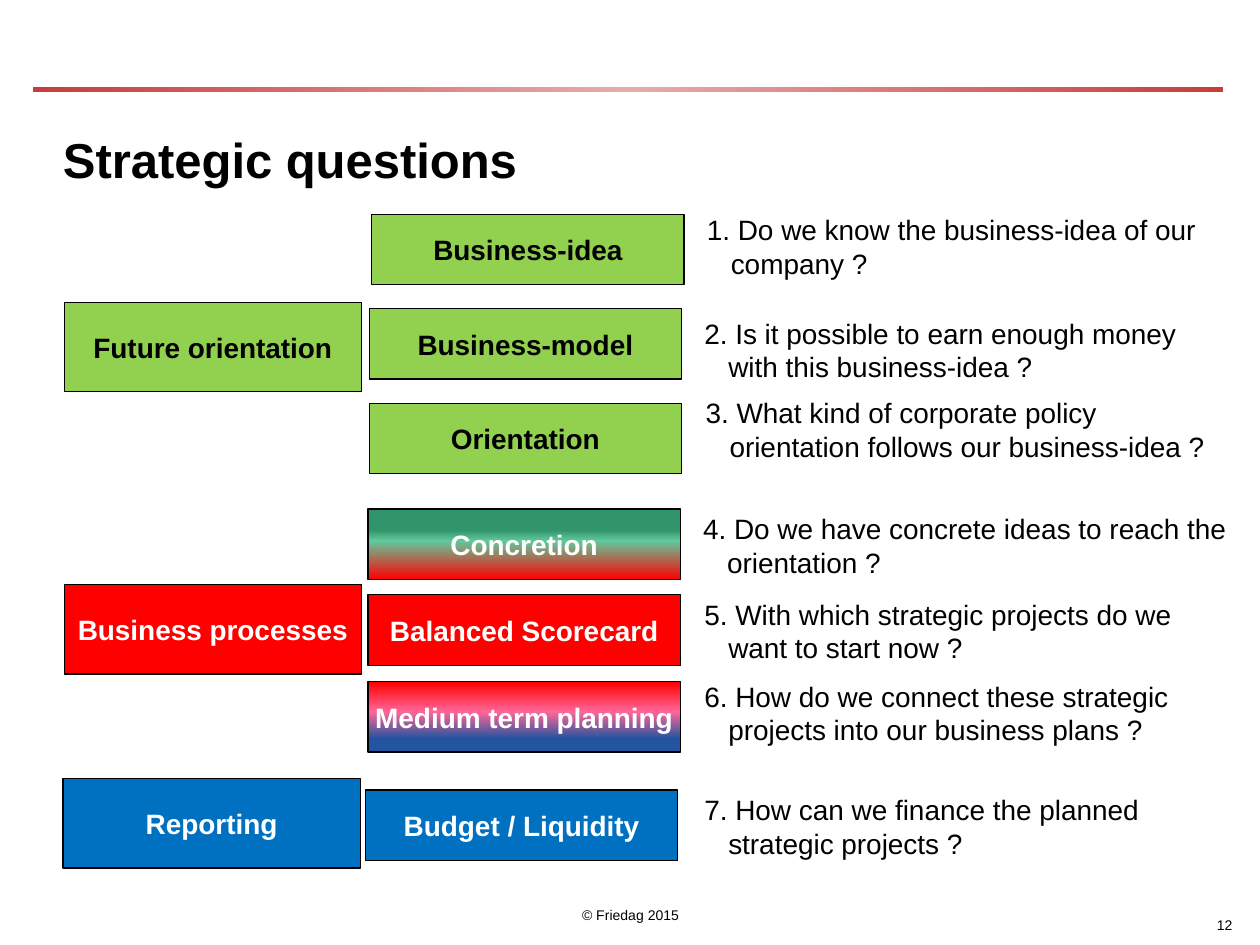
from lxml.etree import SubElement as Sub
from pptx import Presentation as Pres
from pptx.dml.color import RGBColor as RGB
from pptx.enum.shapes import MSO_SHAPE as Shape
from pptx.enum.text import MSO_ANCHOR as Anchor, PP_ALIGN as Align
from pptx.oxml.ns import qn
from pptx.util import Inches, Pt

HUES = {
    "black": "000000", "white": "FFFFFF", "lime": "92D050", "red": "FF0000",
    "blue": "0070C0", "rule": "C83C3C", "blush": "E7ABAB", "pine": "32946A",
    "mint": "60C99C", "pink": "FF6699", "navy": "2254A0",
}
FADE = [(0, "pine"), (30, "pine"), (45, "mint"), (100, "red")]
DUSK = [(0, "red"), (43, "pink"), (81, "navy")]
LINE = [(0, "rule"), (50, "blush"), (100, "rule")]


def put(frame, text, size=16, bold=False, hue="black", align=Align.LEFT,
        anchor=Anchor.TOP, pads=(0.04, 0.04, 0.04, 0.04), hang=0, after=0):
    frame.word_wrap = True
    frame.vertical_anchor = anchor
    (frame.margin_left, frame.margin_top,
     frame.margin_right, frame.margin_bottom) = map(Inches, pads)
    para = frame.paragraphs[0]
    para.alignment = align
    para.space_after = Pt(after)
    if hang:
        props = para._p.get_or_add_pPr()
        props.set("marL", str(Inches(hang)))
        props.set("indent", str(-Inches(hang)))
    run = para.add_run()
    run.text = text
    font = run.font
    font.name, font.size, font.bold = "Arial", Pt(size), bold
    font.color.rgb = RGB.from_string(HUES[hue])


class Deck:
    def __init__(self):
        self.pres = Pres()
        self.pres.slide_width = Inches(10)
        self.pres.slide_height = Inches(7.5)
        self.slide = self.pres.slides.add_slide(self.pres.slide_layouts[6])

    def blend(self, item, stops, angle):
        item.fill.gradient()
        item.fill.gradient_angle = angle
        group = item._element.spPr.find(qn("a:gradFill")).find(qn("a:gsLst"))
        for old in list(group):
            group.remove(old)
        for pos, hue in stops:
            stop = Sub(group, qn("a:gs"), pos=str(pos * 1000))
            Sub(stop, qn("a:srgbClr"), val=HUES[hue])

    def rect(self, area, fill, angle=270):
        item = self.slide.shapes.add_shape(Shape.RECTANGLE, *map(Inches, area))
        item.shadow.inherit = False
        item.line.fill.background()
        if isinstance(fill, str):
            item.fill.solid()
            item.fill.fore_color.rgb = RGB.from_string(HUES[fill])
        else:
            self.blend(item, fill, angle)
        return item

    def box(self, area, text, fill):
        item = self.rect(area, fill)
        item.line.color.rgb = RGB.from_string(HUES["black"])
        item.line.width = Pt(0.75)
        put(item.text_frame, text, bold=True, align=Align.CENTER,
            hue="black" if fill == "lime" else "white",
            anchor=Anchor.MIDDLE, after=6)

    def text(self, area, words, **style):
        item = self.slide.shapes.add_textbox(*map(Inches, area))
        put(item.text_frame, words, **style)


STEPS = [
    (2.95, 1.7, "Business-idea", "lime"),
    (2.93, 2.45, "Business-model", "lime"),
    (2.93, 3.2, "Orientation", "lime"),
    (2.92, 4.04, "Concretion", FADE),
    (2.92, 4.72, "Balanced Scorecard", "red"),
    (2.92, 5.41, "Medium term planning", DUSK),
    (2.9, 6.27, "Budget / Liquidity", "blue"),
]
AREAS = [
    (0.51, 2.4, "Future orientation", "lime"),
    (0.51, 4.64, "Business processes", "red"),
    (0.5, 6.18, "Reporting", "blue"),
]
ASKS = [
    (5.57, 1.65, 4.03, "Do we know the business-idea of our company ?"),
    (5.55, 2.47, 3.94, "Is it possible to earn enough money with this business-idea ?"),
    (5.56, 3.1, 4.1, "What kind of corporate policy orientation follows our business-idea ?"),
    (5.54, 4.02, 4.27, "Do we have concrete ideas to reach the orientation ?"),
    (5.55, 4.7, 4.07, "With which strategic projects do we want to start now ?"),
    (5.55, 5.35, 4.07, "How do we connect these strategic projects into our business plans ?"),
    (5.55, 6.25, 4.27, "How can we finance the planned strategic projects ?"),
]


def main():
    deck = Deck()
    deck.rect((0.26, 0.69, 9.45, 0.04), LINE, angle=0)
    deck.text((0.46, 0.94, 9.2, 0.76), "Strategic questions", size=28,
              bold=True, pads=(0.04, 0.09, 0.04, 0.05))
    for group, wide, high in ((STEPS, 2.48, 0.56), (AREAS, 2.36, 0.71)):
        for left, top, text, fill in group:
            deck.box((left, top, wide, high), text, fill)
    for num, (left, top, wide, ask) in enumerate(ASKS, 1):
        deck.text((left, top, wide, 0.65), f"{num}. {ask}", hang=0.19, after=6)
    foot = {"size": 8, "anchor": Anchor.BOTTOM, "pads": (0.1, 0, 0.1, 0.04)}
    deck.text((3.42, 6.98, 3.17, 0.39), "© Friedag 2015",
              align=Align.CENTER, **foot)
    deck.text((7.8, 7.06, 2.08, 0.39), "12", align=Align.RIGHT, **foot)
    deck.pres.save("out.pptx")


if __name__ == "__main__":
    main()
